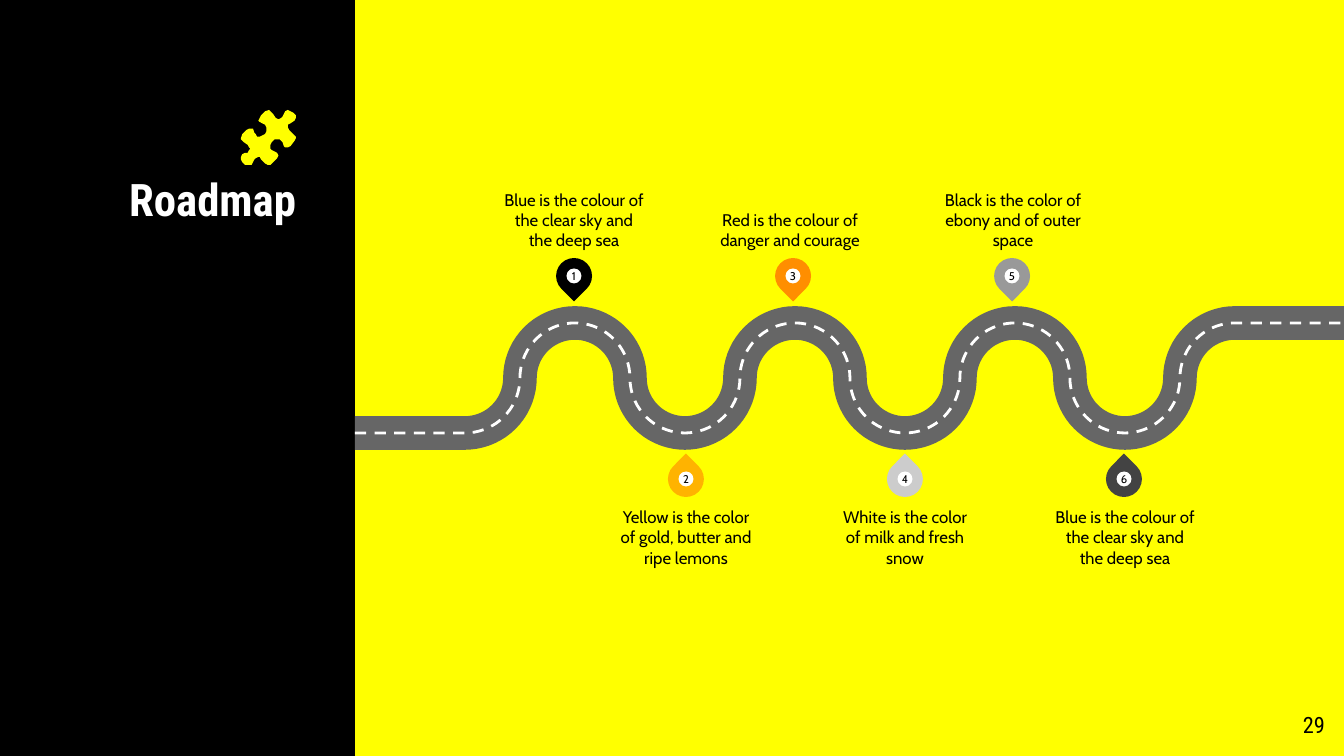
import math

from pptx import Presentation
from pptx import util as u
from pptx.dml.color import RGBColor
from pptx.enum import dml, shapes, text

COLORS = {
    "black": "000000", "white": "FFFFFF", "yellow": "FFFF00", "road": "666666",
    "orange": "FF8E00", "amber": "FFB300", "gray": "999999",
    "silver": "CCCCCC", "charcoal": "434343",
}
HEADING, BODY = "Roboto Condensed", "Cabin"
WIDTH, HEIGHT = 1344, 756
SCALE = 9144000 / WIDTH

# Road: half circles of one radius, alternating valley and crest
ROAD_LEFT, ROAD_RIGHT, ROAD_MIDDLE = 355, 1345, 378
FIRST_BEND, BENDS, RADIUS = 465, 8, 55

# Pin centre, label centre, colour, wording
MILESTONES = [
    (574, 574, "black", "Blue is the colour of the clear sky and the deep sea"),
    (686, 686, "amber", "Yellow is the color of gold, butter and ripe lemons"),
    (793, 790, "orange", "Red is the colour of danger and courage"),
    (905, 905, "silver", "White is the color of milk and fresh snow"),
    (1012, 1013, "gray", "Black is the color of ebony and of outer space"),
    (1124, 1125, "charcoal", "Blue is the colour of the clear sky and the deep sea"),
]
PIN, BADGE = 36, 15
LABEL_WIDTH, LABEL_HEIGHT = 140, 58

# Outline of the puzzle piece on a grid of 41 by 41
PUZZLE_LEFT, PUZZLE_TOP, PUZZLE_UNIT = 241, 110, 1.34
PUZZLE = [
    (21, 0), (18, 1), (15, 4), (14, 6), (13, 8), (14, 9), (16, 10), (18, 11),
    (19, 13), (19, 16), (18, 18), (16, 19), (14, 20), (12, 20), (11, 18),
    (10, 17), (9, 14), (8, 14), (6, 14), (4, 15), (1, 18), (0, 21), (0, 22),
    (2, 24), (5, 26), (6, 28), (7, 29), (6, 30), (5, 32), (3, 32), (1, 33),
    (0, 35), (0, 37), (1, 39), (3, 41), (6, 41), (8, 41), (9, 39), (10, 37),
    (11, 36), (13, 35), (14, 35), (15, 37), (18, 40), (20, 41), (22, 41),
    (25, 38), (27, 36), (28, 34), (27, 32), (25, 31), (23, 30), (22, 29),
    (22, 26), (23, 24), (25, 22), (27, 22), (29, 22), (31, 24), (32, 27),
    (33, 28), (35, 28), (37, 27), (40, 23), (41, 21), (41, 20), (39, 18),
    (36, 15), (35, 13), (35, 11), (37, 10), (40, 8), (41, 6), (41, 4),
    (39, 2), (37, 1), (35, 0), (33, 1), (32, 3), (31, 5), (30, 6), (28, 7),
    (26, 6), (24, 3), (22, 1),
]


def px(length):
    return u.Emu(round(length * SCALE))


def rgb(name):
    return RGBColor.from_string(COLORS[name])


def road_points():
    points = [(ROAD_LEFT, ROAD_MIDDLE + RADIUS)]
    for bend in range(BENDS):
        start = 90 if bend == 0 else 180
        end = 90 if bend == BENDS - 1 else 0
        side = 1 if bend % 2 == 0 else -1
        for degrees in range(start, end - 1, -5):
            angle = math.radians(degrees)
            points.append((FIRST_BEND + 2 * RADIUS * bend + RADIUS * math.cos(angle),
                           ROAD_MIDDLE + side * RADIUS * math.sin(angle)))
    return points + [(ROAD_RIGHT, ROAD_MIDDLE - RADIUS)]


class Painter:
    def __init__(self, page):
        self.page = page

    def background(self, color):
        fill = self.page.background.fill
        fill.solid()
        fill.fore_color.rgb = rgb(color)

    def paint(self, shape, color):
        shape.shadow.inherit = False
        shape.fill.solid()
        shape.fill.fore_color.rgb = rgb(color)
        shape.line.fill.background()

    def shape(self, kind, left, top, width, height, color, parent=None):
        parent = parent or self.page
        shape = parent.shapes.add_shape(kind, px(left), px(top), px(width), px(height))
        self.paint(shape, color)
        return shape

    def outline(self, points, closed):
        corners = [(px(x), px(y)) for x, y in points]
        builder = self.page.shapes.build_freeform(*corners[0])
        builder.add_line_segments(corners[1:], close=closed)
        return builder.convert_to_shape()

    def stroke(self, points, color, points_wide, dash=None):
        shape = self.outline(points, closed=False)
        shape.shadow.inherit = False
        shape.fill.background()
        shape.line.color.rgb = rgb(color)
        shape.line.width = u.Pt(points_wide)
        if dash:
            shape.line.dash_style = dash

    def polygon(self, points, color):
        self.paint(self.outline(points, closed=True), color)

    def put_words(self, shape, wording, size, font=BODY, color="black", bold=False,
                  align=text.PP_ALIGN.CENTER, anchor=text.MSO_ANCHOR.TOP, inset=0):
        frame = shape.text_frame
        frame.word_wrap = True
        frame.vertical_anchor = anchor
        frame.margin_left = frame.margin_right = px(inset)
        frame.margin_top = frame.margin_bottom = px(inset)
        para = frame.paragraphs[0]
        para.text = wording
        para.alignment = align
        para.font.size = u.Pt(size)
        para.font.name = font
        para.font.bold = bold
        para.font.color.rgb = rgb(color)
        return para

    def text(self, left, top, width, height, wording, size, **style):
        box = self.page.shapes.add_textbox(px(left), px(top), px(width), px(height))
        return self.put_words(box, wording, size, **style)

    def pin(self, x, y, number, color, rotation):
        """Draw a numbered pin centred on x, y."""
        group = self.page.shapes.add_group_shape()
        drop = self.shape(shapes.MSO_SHAPE.TEAR, x - PIN / 2, y - PIN / 2,
                          PIN, PIN, color, group)
        drop.rotation = rotation
        badge = self.shape(shapes.MSO_SHAPE.OVAL, x - BADGE / 2, y - BADGE / 2,
                           BADGE, BADGE, "white", group)
        self.put_words(badge, str(number), 6, anchor=text.MSO_ANCHOR.MIDDLE)


def main():
    deck = Presentation()
    deck.slide_width, deck.slide_height = px(WIDTH), px(HEIGHT)
    painter = Painter(deck.slides.add_slide(deck.slide_layouts[6]))

    painter.background("yellow")
    painter.shape(shapes.MSO_SHAPE.RECTANGLE, 0, 0, ROAD_LEFT, HEIGHT, "black")
    title = painter.text(59, 165, 250, 218, "Roadmap", 24, font=HEADING, color="white",
                         bold=True, align=text.PP_ALIGN.RIGHT, inset=13)
    title.line_spacing = 0.9
    painter.text(1258, 698, 80, 58, "29", 12, font=HEADING,
                 align=text.PP_ALIGN.RIGHT, inset=13)

    road = road_points()
    painter.stroke(road, "road", 18)
    painter.stroke(road, "white", 1.5, dml.MSO_LINE.DASH)

    for number, (pin_x, label_x, color, wording) in enumerate(MILESTONES, 1):
        if number % 2:
            pin_y, rotation, label_top, anchor = 276, 135, 192, text.MSO_ANCHOR.BOTTOM
        else:
            pin_y, rotation, label_top, anchor = 479, 315, 507, text.MSO_ANCHOR.TOP
        painter.pin(pin_x, pin_y, number, color, rotation)
        painter.text(label_x - LABEL_WIDTH / 2, label_top, LABEL_WIDTH, LABEL_HEIGHT,
                     wording, 9, anchor=anchor)

    painter.polygon([(PUZZLE_LEFT + x * PUZZLE_UNIT, PUZZLE_TOP + y * PUZZLE_UNIT)
                     for x, y in PUZZLE], "yellow")
    deck.save("out.pptx")


if __name__ == "__main__":
    main()
